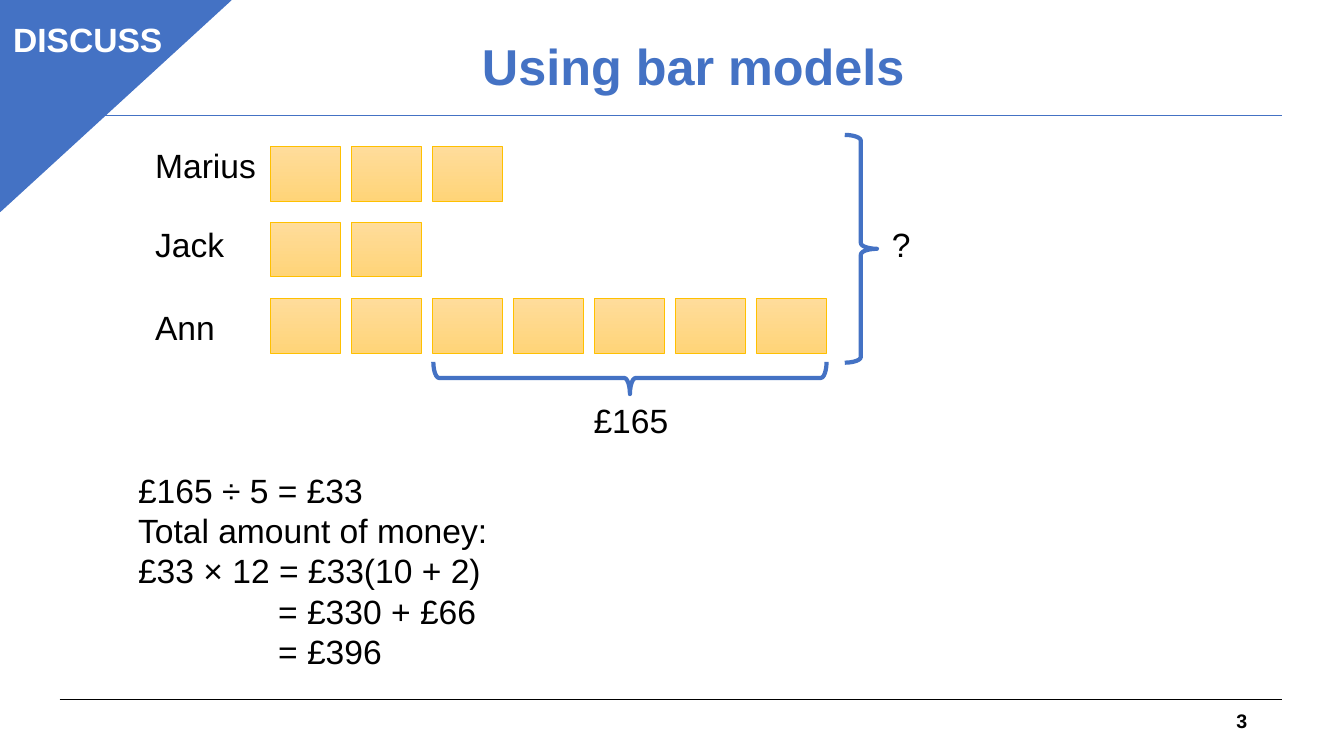
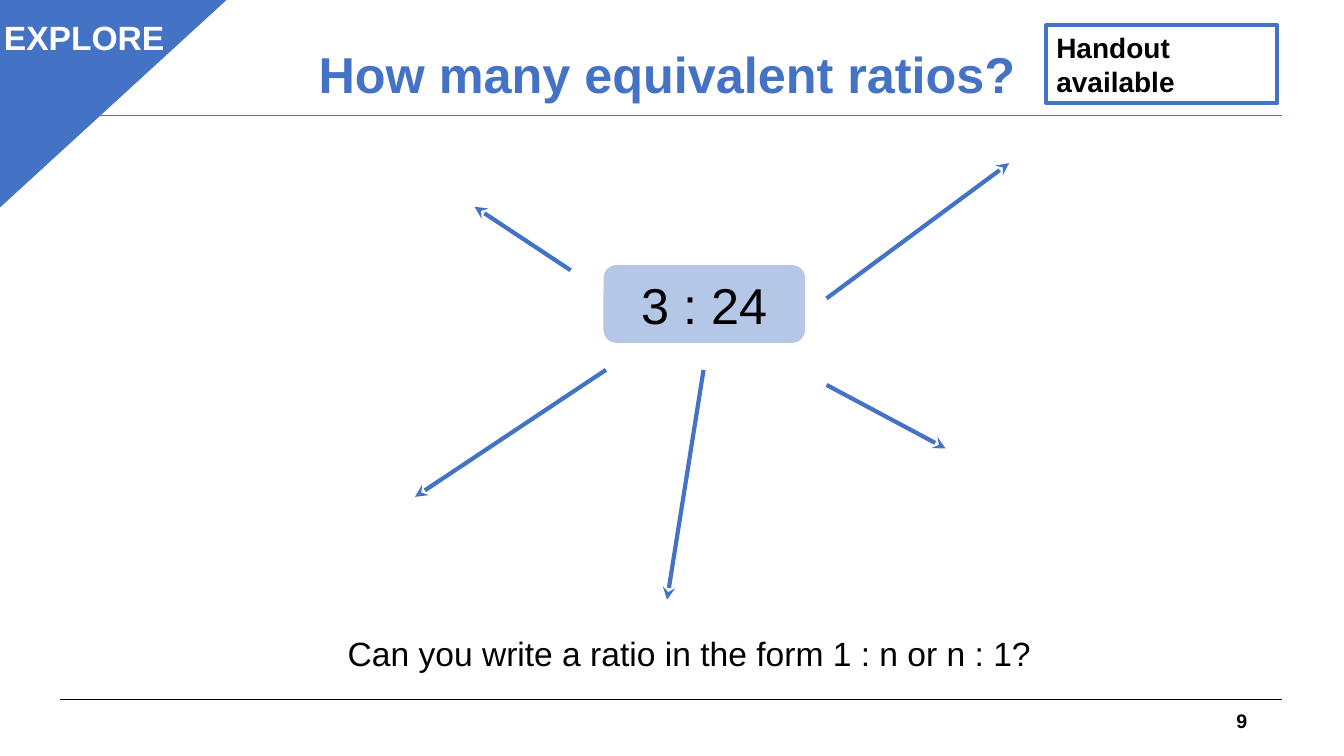
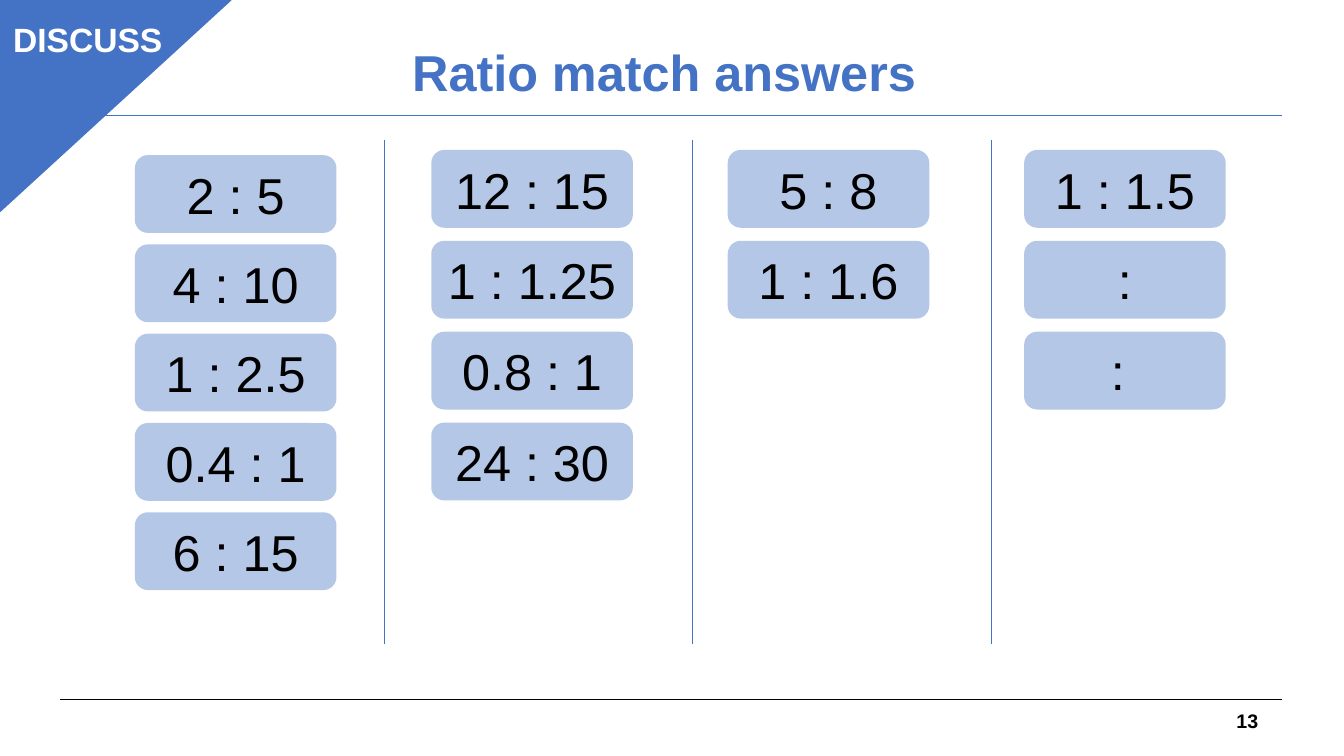
"""Build three ratio lesson slides: a bar model, equivalent ratios and a ratio match."""
from lxml.etree import SubElement
from pptx import Presentation
from pptx.dml.color import RGBColor
from pptx.enum.shapes import MSO_CONNECTOR as Connector, MSO_SHAPE as Shape
from pptx.enum.text import MSO_ANCHOR as Anchor, PP_ALIGN as Align
from pptx.oxml.ns import qn
from pptx.util import Cm, Pt

COLOURS = {
    "blue": "4472C4",
    "pale blue": "B4C7E7",
    "black": "000000",
    "white": "FFFFFF",
    "bar top": "FFDC9B",
    "bar bottom": "FFD478",
    "bar edge": "FFC000",
}
FONT = "Arial"
CARD_SIZE = (5.08, 1.96)
BAR_LEFT, BAR_PITCH = 6.83, 2.04
BAR_SIZE = (1.75, 1.37)


def colour(name):
    return RGBColor.from_string(COLOURS[name])


def write(frame, lines, size, ink="black", bold=False, align=Align.LEFT):
    frame.word_wrap = True
    frame.text = "\n".join(lines)
    for paragraph in frame.paragraphs:
        paragraph.alignment = align
        font = paragraph.font
        font.name, font.size, font.bold = FONT, Pt(size), bold
        font.color.rgb = colour(ink)


def add_text(slide, box, *lines, size=24, **style):
    frame = slide.shapes.add_textbox(*map(Cm, box)).text_frame
    write(frame, lines, size, **style)
    return frame


def add_shape(slide, kind, box, fill=None, line=None, width=1):
    shape = slide.shapes.add_shape(kind, *map(Cm, box))
    shape.shadow.inherit = False
    if fill:
        shape.fill.solid()
        shape.fill.fore_color.rgb = colour(fill)
    else:
        shape.fill.background()
    if line:
        shape.line.color.rgb = colour(line)
        shape.line.width = Pt(width)
    else:
        shape.line.fill.background()
    return shape


def add_line(slide, start, end, width, ink="blue", arrow=False):
    line = slide.shapes.add_connector(Connector.STRAIGHT, *map(Cm, start + end))
    line.line.color.rgb = colour(ink)
    line.line.width = Pt(width)
    properties = line._element.spPr
    SubElement(properties, qn("a:effectLst"))
    if arrow:
        SubElement(properties.find(qn("a:ln")), qn("a:tailEnd"), type="stealth")


def add_card(slide, left, top, ratio):
    card = add_shape(slide, Shape.ROUNDED_RECTANGLE, (left, top, *CARD_SIZE), "pale blue")
    frame = card.text_frame
    frame.margin_left = frame.margin_right = Cm(0.23)
    frame.margin_top = frame.margin_bottom = Cm(0.1)
    write(frame, [ratio], 36, align=Align.CENTER)


def add_bar(slide, left, top):
    bar = add_shape(slide, Shape.RECTANGLE, (left, top, *BAR_SIZE), line="bar edge", width=0.75)
    bar.fill.gradient()
    bar.fill.gradient_angle = 270
    for stop, name in zip(bar.fill.gradient_stops, ("bar top", "bar bottom")):
        stop.color.rgb = colour(name)


def add_brace(slide, box, rotation=0):
    brace = add_shape(slide, Shape.RIGHT_BRACE, box, line="blue", width=3)
    brace.adjustments[0] = 0.18
    brace.rotation = rotation


def add_corner(slide, label, left=0, top=0, label_left=0.08):
    corner = add_shape(slide, Shape.ISOSCELES_TRIANGLE, (left, top, 5.82, 5.33), "blue", "blue")
    corner.adjustments[0] = 0
    corner._element.spPr.xfrm.set("flipV", "1")
    add_text(slide, (label_left, top + 0.36, 4.72, 1.27), label, ink="white", bold=True)


def add_lesson_slide(presentation, number, title, title_box):
    slide = presentation.slides.add_slide(presentation.slide_layouts[6])
    for height, ink in ((17.63, "black"), (2.9, "blue")):
        add_line(slide, (1.5, height), (32.31, height), 0.75, ink)
    add_text(slide, (30.91, 17.73, 1.27, 0.86), str(number), size=14, bold=True)
    frame = add_text(slide, title_box, title, size=36, ink="blue", bold=True, align=Align.CENTER)
    frame.vertical_anchor = Anchor.MIDDLE
    frame.paragraphs[0].line_spacing = 0.9
    return slide


def build_bar_models(presentation):
    slide = add_lesson_slide(presentation, 3, "Using bar models", (9.32, 0.76, 16.31, 1.96))
    add_corner(slide, "DISCUSS")
    rows = (("Marius", 3, 3.53, 3.7), ("Jack", 2, 5.51, 5.6), ("Ann", 7, 7.62, 7.53))
    for name, count, name_top, bar_top in rows:
        add_text(slide, (3.66, name_top, 3.18, 1.09), name)
        for index in range(count):
            add_bar(slide, BAR_LEFT + index * BAR_PITCH, bar_top)
    add_brace(slide, (21.29, 3.4, 0.81, 5.74))
    add_text(slide, (22.23, 5.51, 2.97, 1.17), "?")
    add_brace(slide, (15.47, 4.57, 0.81, 9.91), 90)
    add_text(slide, (14.71, 9.96, 2.79, 1.17), "£165")
    working = add_text(
        slide, (3.23, 11.71, 11.35, 5.38),
        "£165 ÷ 5 = £33", "Total amount of money:", "£33 × 12 = £33(10 + 2)",
        "= £330 + £66", "= £396",
    )
    for paragraph in working.paragraphs[3:]:
        paragraph._p.get_or_add_pPr().set("marL", str(int(Cm(3.53))))


def build_equivalent_ratios(presentation):
    slide = add_lesson_slide(
        presentation, 9, "How many equivalent ratios? ", (7.67, 0.91, 18.29, 2.06))
    add_corner(slide, "EXPLORE", -0.08, -0.05, -0.15)
    handout = add_shape(slide, Shape.RECTANGLE, (26.37, 0.64, 5.82, 1.96), line="blue", width=3)
    write(handout.text_frame, ["Handout\vavailable"], 20, bold=True)
    add_card(slide, 15.21, 6.68, "3 : 24")
    arrows = (
        ((20.83, 7.52), (25.43, 4.11)),
        ((14.38, 6.81), (11.96, 5.21)),
        ((15.27, 9.32), (10.46, 12.52)),
        ((17.73, 9.32), (16.81, 15.11)),
        ((20.83, 9.7), (23.83, 11.3)),
    )
    for start, end in arrows:
        add_line(slide, start, end, 3, arrow=True)
    add_text(slide, (8.51, 15.82, 18.64, 1.27), "Can you write a ratio in the form 1 : n or n : 1?")


def build_ratio_match(presentation):
    slide = add_lesson_slide(presentation, 13, "Ratio match answers ", (9.7, 1.04, 14.43, 1.7))
    add_corner(slide, "DISCUSS")
    columns = (
        (3.91, 2.25, ("2 : 5", "4 : 10", "1 : 2.5", "0.4 : 1", "6 : 15")),
        (3.78, 2.29, ("12 : 15", "1 : 1.25", "0.8 : 1", "24 : 30")),
        (3.78, 2.29, ("5 : 8", "1 : 1.6")),
        (3.78, 2.29, ("1 : 1.5", ":", ": ")),
    )
    for column, (top, pitch, ratios) in enumerate(columns):
        for row, ratio in enumerate(ratios):
            add_card(slide, 3.4 + column * 7.47, top + row * pitch, ratio)
    for left in (9.68, 17.45, 24.99):
        add_line(slide, (left, 3.53), (left, 16.23), 0.5)


def main():
    presentation = Presentation()
    presentation.slide_width, presentation.slide_height = Cm(33.87), Cm(19.05)
    build_bar_models(presentation)
    build_equivalent_ratios(presentation)
    build_ratio_match(presentation)
    presentation.save("out.pptx")


if __name__ == "__main__":
    main()
